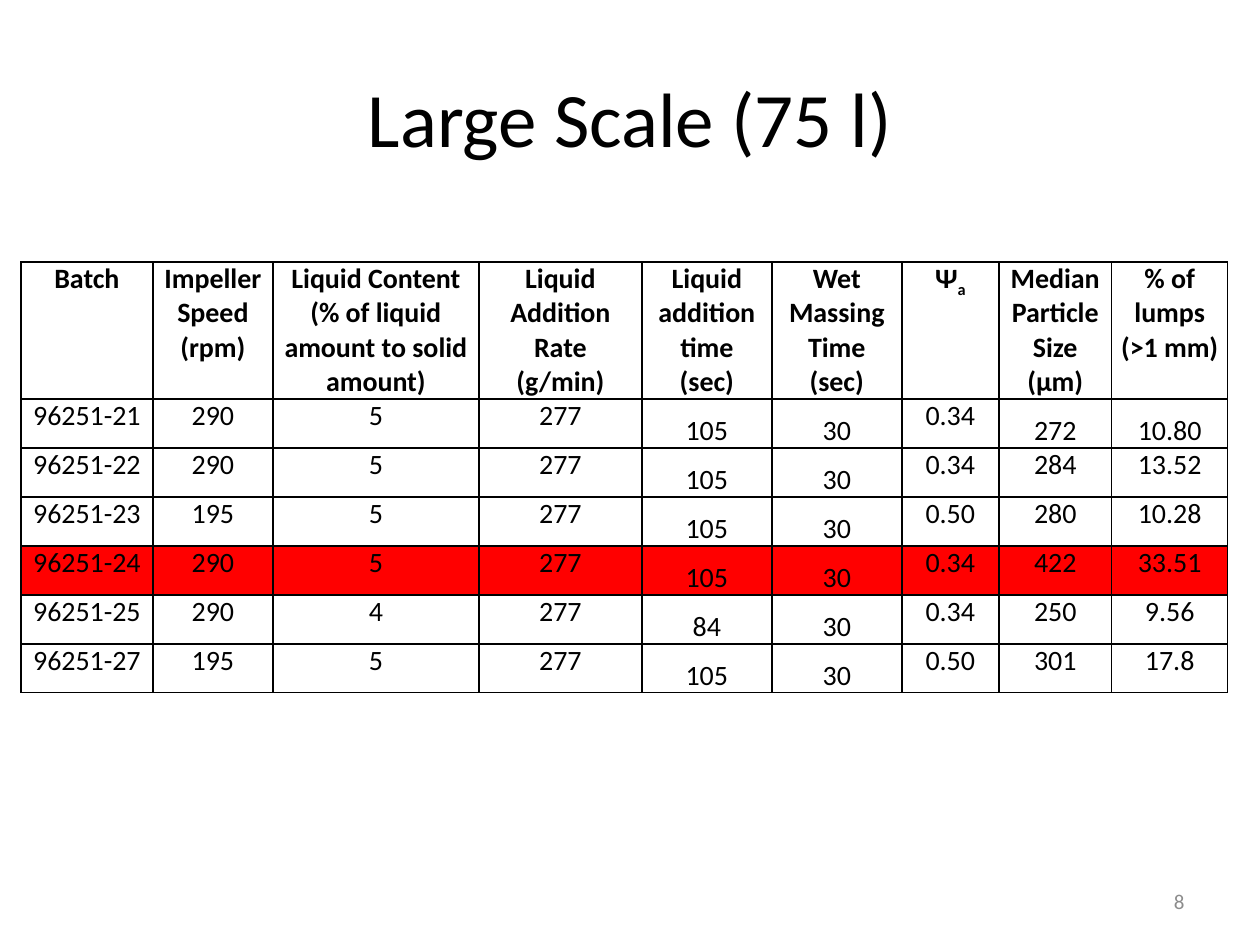
"""Build the slide with the table of large scale (75 l) granulation batches."""
from lxml.etree import SubElement
from pptx import Presentation
from pptx.dml.color import RGBColor
from pptx.enum.text import MSO_ANCHOR as Anchor, PP_ALIGN as Align
from pptx.oxml.ns import qn
from pptx.util import Pt

SCALE = 914400 / 126
FONT = "Calibri"
COLORS = {"text": "000000", "border": "000000", "number": "8C8C8C", "highlight": "FF0000"}


def px(*lengths):
    return [round(length * SCALE) for length in lengths]


def add_run(paragraph, text, size, color="text", bold=False):
    run = paragraph.add_run()
    run.text = text
    run.font.name = FONT
    run.font.size = Pt(size)
    run.font.bold = bold
    run.font.color.rgb = RGBColor.from_string(COLORS[color])
    return run


presentation = Presentation()
presentation.slide_width, presentation.slide_height = px(1260, 945)
slide = presentation.slides.add_slide(presentation.slide_layouts[5])

title = slide.shapes.title
title.left, title.top, title.width, title.height = px(63, 38, 1134, 157)
title.text_frame.vertical_anchor = Anchor.MIDDLE
paragraph = title.text_frame.paragraphs[0]
paragraph.alignment = Align.CENTER
add_run(paragraph, "Large Scale (75 l)", 44)

number_box = slide.shapes.add_textbox(*px(903, 876, 294, 50))
number_box.text_frame.word_wrap = True
number_box.text_frame.vertical_anchor = Anchor.MIDDLE
paragraph = number_box.text_frame.paragraphs[0]
paragraph.alignment = Align.RIGHT
add_run(paragraph, "8", 12, "number")

headers = [
    "Batch", "Impeller Speed (rpm)", "Liquid Content (% of liquid amount to solid amount)",
    "Liquid Addition Rate (g/min)", "Liquid addition time (sec)", "Wet Massing Time (sec)",
    "Ψ", "Median Particle Size (µm)", "% of lumps (>1 mm)",
]
batches = [
    ["96251-21", "290", "5", "277", "105", "30", "0.34", "272", "10.80"],
    ["96251-22", "290", "5", "277", "105", "30", "0.34", "284", "13.52"],
    ["96251-23", "195", "5", "277", "105", "30", "0.50", "280", "10.28"],
    ["96251-24", "290", "5", "277", "105", "30", "0.34", "422", "33.51"],
    ["96251-25", "290", "4", "277", "84", "30", "0.34", "250", "9.56"],
    ["96251-27", "195", "5", "277", "105", "30", "0.50", "301", "17.8"],
]
rows = [headers] + batches
column_widths = px(132, 120, 206, 163, 130, 130, 97, 113, 116)
row_heights = px(137, *[49] * len(batches))
highlighted_batch = "96251-24"
time_columns = (4, 5)
result_columns = (7, 8)

left, top = px(21, 262)
table = slide.shapes.add_table(
    len(rows), len(headers), left, top, sum(column_widths), sum(row_heights)
).table
table.first_row = False
table.horz_banding = False
for column, width in zip(table.columns, column_widths):
    column.width = width
for row, height in zip(table.rows, row_heights):
    row.height = height

for row_index, values in enumerate(rows):
    is_header = row_index == 0
    for column_index, value in enumerate(values):
        cell = table.cell(row_index, column_index)
        cell.margin_left, cell.margin_right = px(9, 9)
        cell.margin_top = cell.margin_bottom = 0
        at_bottom = not is_header and (
            column_index in time_columns or (row_index == 1 and column_index in result_columns)
        )
        cell.vertical_anchor = Anchor.BOTTOM if at_bottom else Anchor.TOP
        paragraph = cell.text_frame.paragraphs[0]
        paragraph.alignment = Align.CENTER
        add_run(paragraph, value, 16, bold=is_header)
        if value == "Ψ":
            subscript = add_run(paragraph, "a", 16, bold=True)
            subscript.font._element.set("baseline", "-25000")

        properties = cell._tc.get_or_add_tcPr()
        for side in ("a:lnL", "a:lnR", "a:lnT", "a:lnB"):
            border = SubElement(properties, qn(side), w=str(Pt(1)))
            border_fill = SubElement(border, qn("a:solidFill"))
            SubElement(border_fill, qn("a:srgbClr"), val=COLORS["border"])
        if values[0] == highlighted_batch:
            cell.fill.solid()
            cell.fill.fore_color.rgb = RGBColor.from_string(COLORS["highlight"])
        else:
            cell.fill.background()

presentation.save("out.pptx")
